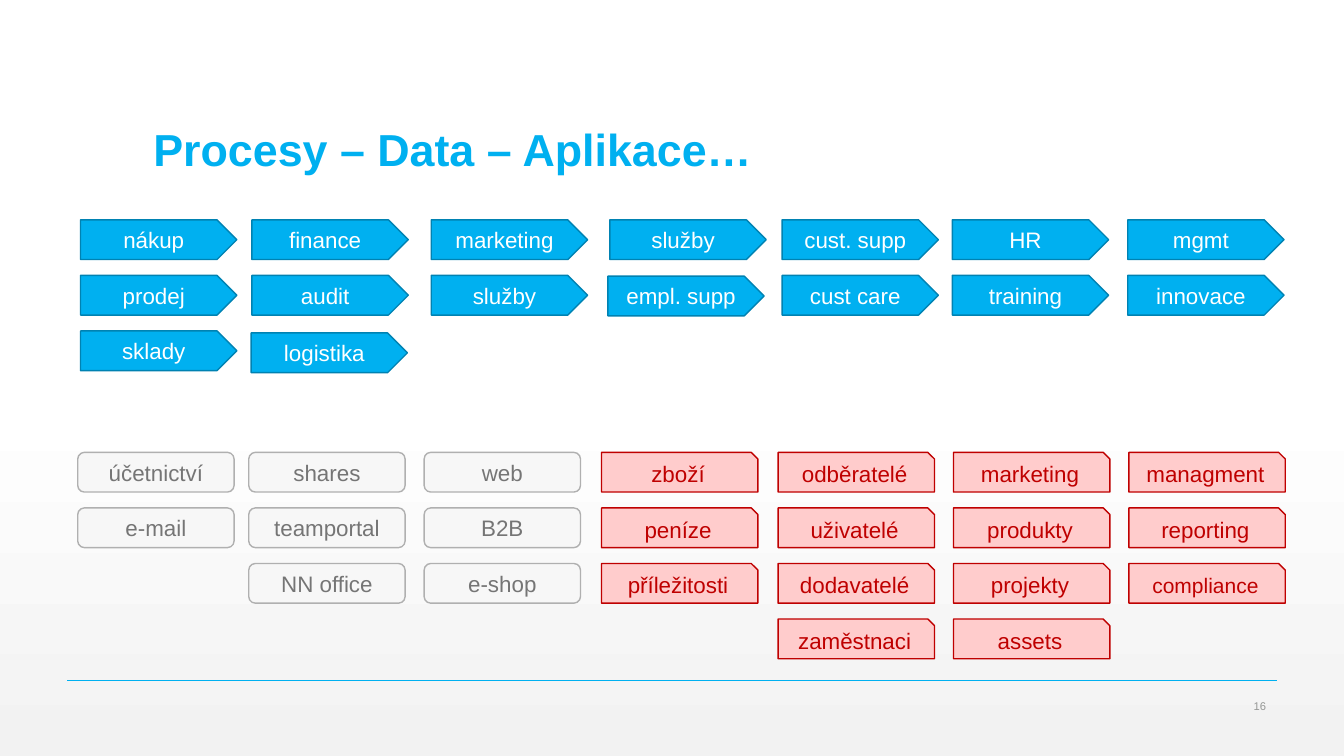
from dataclasses import dataclass, field

from lxml import etree
from pptx import Presentation
from pptx.dml.color import RGBColor
from pptx.enum.shapes import MSO_CONNECTOR, MSO_SHAPE
from pptx.enum.text import MSO_ANCHOR, MSO_AUTO_SIZE, PP_ALIGN
from pptx.oxml.ns import qn
from pptx.slide import Slide
from pptx.util import Cm, Pt

PLATE = MSO_SHAPE.PENTAGON
ROUND = MSO_SHAPE.ROUNDED_RECTANGLE
SNIP = MSO_SHAPE.SNIP_1_RECTANGLE
LINE = MSO_CONNECTOR.STRAIGHT
MIDDLE, BOTTOM = MSO_ANCHOR.MIDDLE, MSO_ANCHOR.BOTTOM
CENTER, RIGHT = PP_ALIGN.CENTER, PP_ALIGN.RIGHT

COLORS = {
    "white": "FFFFFF", "haze": "F2F2F2", "blue": "00B0F0", "navy": "0082B2",
    "pale": "F7F7F7", "edge": "B0B0B0", "gray": "757575", "pink": "FFCCCC",
    "red": "BF0000", "number": "959795",
}
FONT = "Arial"
BOX_W, BOX_H, STEP = 3.94, 1.0, 1.4
SIZES = {"compliance": 15}  # all other labels are 16 pt


@dataclass
class Group:
    """Columns of equal boxes; each column is its left edge and its labels."""
    kind: int
    top: float
    fill: str
    line: str
    text: str
    columns: list[tuple[float, list[str]]]
    shifts: dict[str, tuple[float, float]] = field(default_factory=dict)


GROUPS = [
    # Processes
    Group(PLATE, 5.54, "blue", "navy", "white", [
        (2.03, ["nákup", "prodej", "sklady"]),
        (6.35, ["finance", "audit", "logistika"]),
        (10.87, ["marketing", "služby"]),
        (15.37, ["služby", "empl. supp"]),
        (19.71, ["cust. supp", "cust care"]),
        (24.0, ["HR", "training"]),
        (28.42, ["mgmt", "innovace"]),
    ], {"logistika": (-0.02, 0.05), "empl. supp": (-0.05, 0.02)}),
    # Applications
    Group(ROUND, 11.4, "pale", "edge", "gray", [
        (1.96, ["účetnictví", "e-mail"]),
        (6.27, ["shares", "teamportal", "NN office"]),
        (10.69, ["web", "B2B", "e-shop"]),
    ]),
    # Data
    Group(SNIP, 11.4, "pink", "red", "red", [
        (15.16, ["zboží", "peníze", "příležitosti"]),
        (19.61, ["odběratelé", "uživatelé", "dodavatelé", "zaměstnaci"]),
        (24.03, ["marketing", "produkty", "projekty", "assets"]),
        (28.45, ["managment", "reporting", "compliance"]),
    ]),
]


def color(name: str) -> RGBColor:
    return RGBColor.from_string(COLORS[name])


def write(shape, text: str, size: float, tint: str, align=None,
          anchor=MIDDLE, bold: bool = False) -> None:
    frame = shape.text_frame
    frame.word_wrap = True
    frame.auto_size = MSO_AUTO_SIZE.NONE
    frame.vertical_anchor = anchor
    par = frame.paragraphs[0]
    par.text = text
    par.alignment = align
    font = par.font
    font.name, font.size, font.bold = FONT, Pt(size), bold
    font.color.rgb = color(tint)


def draw_group(slide: Slide, group: Group) -> None:
    for left, labels in group.columns:
        for row, label in enumerate(labels):
            dx, dy = group.shifts.get(label, (0, 0))
            box = slide.shapes.add_shape(
                group.kind, Cm(left + dx), Cm(group.top + row * STEP + dy),
                Cm(BOX_W), Cm(BOX_H))
            box.shadow.inherit = False
            box.fill.solid()
            box.fill.fore_color.rgb = color(group.fill)
            box.line.color.rgb = color(group.line)
            box.line.width = Pt(1)
            write(box, label, SIZES.get(label, 16), group.text, CENTER)


def draw_back(slide: Slide) -> None:
    fill = slide.background.fill
    fill.gradient()
    fill.gradient_angle = 270
    for stop, (place, name) in zip(fill.gradient_stops,
                                   [(0.53, "white"), (1.0, "haze")]):
        stop.position = place
        stop.color.rgb = color(name)


def draw_foot(slide: Slide) -> None:
    rule = slide.shapes.add_connector(LINE, Cm(1.7), Cm(17.15), Cm(32.18), Cm(17.15))
    rule.line.color.rgb = color("blue")
    rule.line.width = Pt(1)
    etree.SubElement(rule.element.spPr, qn("a:effectLst"))
    number = slide.shapes.add_textbox(Cm(29.62), Cm(17.48), Cm(2.54), Cm(0.61))
    write(number, "16", 8, "number", RIGHT)


def main() -> None:
    deck = Presentation()
    deck.slide_width, deck.slide_height = Cm(33.87), Cm(19.05)
    slide = deck.slides.add_slide(deck.slide_layouts[5])
    draw_back(slide)

    # Title
    title = slide.shapes.title
    title.left, title.top = Cm(3.61), Cm(1.4)
    title.width, title.height = Cm(26.67), Cm(3.18)
    write(title, "Procesy – Data – Aplikace…", 32, "blue",
          PP_ALIGN.LEFT, BOTTOM, True)
    title.text_frame.paragraphs[0].line_spacing = 0.9

    # Boxes and footer
    for group in GROUPS:
        draw_group(slide, group)
    draw_foot(slide)
    deck.save("out.pptx")


if __name__ == "__main__":
    main()
